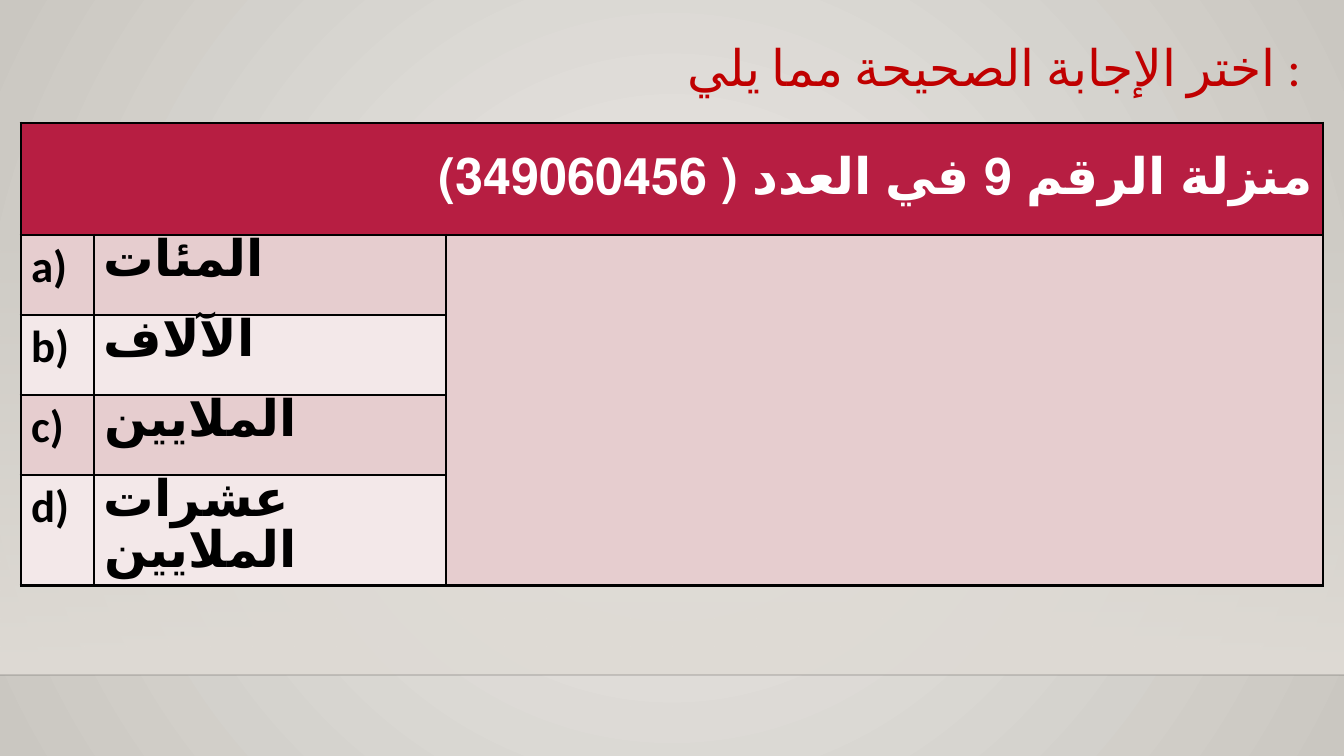
import pptx
import pptx.util
import pptx.dml.color
import pptx.enum.lang
import pptx.enum.shapes
import pptx.enum.text
import pptx.oxml
import pptx.oxml.ns
import lxml.etree

THEME = {
    "font": "Calibri",
    "title_size": 36, "option_size": 36, "letter_size": 32,
    "title": "C00000", "header": "B71E42", "white": "FFFFFF", "ink": "000000",
    "bands": ["E6CDCF", "F3E8E9"],
    "glow": "ECEAE7", "edge": "CAC7C1", "floor": "DFDBD5",
}
EMU_PER_PX = 12192000 / 1344
DRAWING = "http://schemas.openxmlformats.org/drawingml/2006/main"
ARABIC = pptx.enum.lang.MSO_LANGUAGE_ID.ARABIC
ENGLISH = pptx.enum.lang.MSO_LANGUAGE_ID.ENGLISH_US


def px(length):
    return pptx.util.Emu(round(length * EMU_PER_PX))


def write(para, text, size, color, bold, language=ARABIC, complex_font=None):
    span = para.add_run()
    span.text = text
    span.font.name = THEME["font"]
    span.font.size = pptx.util.Pt(size)
    span.font.bold = bold
    span.font.language_id = language
    span.font.color.rgb = pptx.dml.color.RGBColor.from_string(color)
    if complex_font:
        lxml.etree.SubElement(
            span._r.rPr, pptx.oxml.ns.qn("a:cs"), typeface=complex_font)


deck = pptx.Presentation()
deck.slide_width, deck.slide_height = px(1344), px(756)
page = deck.slides.add_slide(deck.slide_layouts[5])

backdrop = page.background.fill
backdrop.gradient()
for stop, color in zip(backdrop.gradient_stops, [THEME["glow"], THEME["edge"]]):
    stop.color.rgb = pptx.dml.color.RGBColor.from_string(color)
gradient = page.background._cSld.find(".//" + pptx.oxml.ns.qn("a:gradFill"))
gradient.replace(gradient.find(pptx.oxml.ns.qn("a:lin")), pptx.oxml.parse_xml(
    f'<a:path xmlns:a="{DRAWING}" path="circle">'
    '<a:fillToRect l="50000" t="50000" r="50000" b="50000"/></a:path>'))

floor = page.shapes.add_shape(
    pptx.enum.shapes.MSO_SHAPE.RECTANGLE, px(0), px(223), px(1344), px(452))
floor.shadow.inherit = False
floor.line.fill.background()
floor.fill.gradient()
floor.fill.gradient_angle = 270
for stop in floor.fill.gradient_stops:
    stop.color.rgb = pptx.dml.color.RGBColor.from_string(THEME["floor"])
clear_color = floor._element.spPr.find(".//" + pptx.oxml.ns.qn("a:srgbClr"))
lxml.etree.SubElement(clear_color, pptx.oxml.ns.qn("a:alpha"), val="0")

horizon = page.shapes.add_connector(
    pptx.enum.shapes.MSO_CONNECTOR.STRAIGHT, px(0), px(675), px(1344), px(675))
horizon.line.width = pptx.util.Pt(1)
horizon.line.color.rgb = pptx.dml.color.RGBColor.from_string(THEME["ink"])
horizon_color = horizon._element.spPr.find(".//" + pptx.oxml.ns.qn("a:srgbClr"))
lxml.etree.SubElement(horizon_color, pptx.oxml.ns.qn("a:alpha"), val="20000")
lxml.etree.SubElement(horizon._element.spPr, pptx.oxml.ns.qn("a:effectLst"))

title = page.shapes.title
title.left, title.top, title.width, title.height = px(640), px(15), px(671), px(82)
box = title.text_frame
box.word_wrap = True
box.auto_size = pptx.enum.text.MSO_AUTO_SIZE.NONE
box.vertical_anchor = pptx.enum.text.MSO_ANCHOR.BOTTOM
box.margin_left = box.margin_right = px(10)
box.margin_top, box.margin_bottom = px(5), px(0)
para = box.paragraphs[0]
para.alignment = pptx.enum.text.PP_ALIGN.RIGHT
para.line_spacing = 0.9
write(para, "اختر الإجابة الصحيحة مما يلي :", THEME["title_size"], THEME["title"], False,
      complex_font=THEME["font"])

options = [("a)", "المئات"), ("b)", "الآلاف"), ("c)", "الملايين"), ("d)", "عشرات الملايين")]
widths = [73, 352, 877]
heights = [112] + [80] * len(options)
quiz = page.shapes.add_table(
    len(heights), len(widths), px(21), px(123), px(sum(widths)), px(sum(heights))).table
for column, width in zip(quiz.columns, widths):
    column.width = px(width)
for row, height in zip(quiz.rows, heights):
    row.height = px(height)

for index, row in enumerate(quiz.rows):
    color = THEME["bands"][(index - 1) % 2] if index else THEME["header"]
    for cell in row.cells:
        cell.fill.solid()
        cell.fill.fore_color.rgb = pptx.dml.color.RGBColor.from_string(color)
        for place, side in enumerate(["lnL", "lnR", "lnT", "lnB"]):
            cell._tc.tcPr.insert(place, pptx.oxml.parse_xml(
                f'<a:{side} xmlns:a="{DRAWING}" w="{pptx.util.Pt(2.25)}"><a:solidFill>'
                f'<a:srgbClr val="{THEME["ink"]}"/></a:solidFill></a:{side}>'))
quiz.cell(0, 0).merge(quiz.cell(0, 2))
quiz.cell(1, 2).merge(quiz.cell(len(options), 2))

question = quiz.cell(0, 0)
question.vertical_anchor = pptx.enum.text.MSO_ANCHOR.MIDDLE
para = question.text_frame.paragraphs[0]
para.alignment = pptx.enum.text.PP_ALIGN.RIGHT
para._p.get_or_add_pPr().set("rtl", "1")
write(para, "منزلة الرقم 9 في العدد ( 349060456)", THEME["title_size"], THEME["white"], True)

for index, (letter, answer) in enumerate(options, 1):
    write(quiz.cell(index, 0).text_frame.paragraphs[0],
          letter, THEME["letter_size"], THEME["ink"], True, ENGLISH)
    para = quiz.cell(index, 1).text_frame.paragraphs[0]
    para.line_spacing = pptx.util.Pt(THEME["option_size"])
    write(para, answer, THEME["option_size"], THEME["ink"], True,
          complex_font=THEME["font"])

deck.save("out.pptx")
